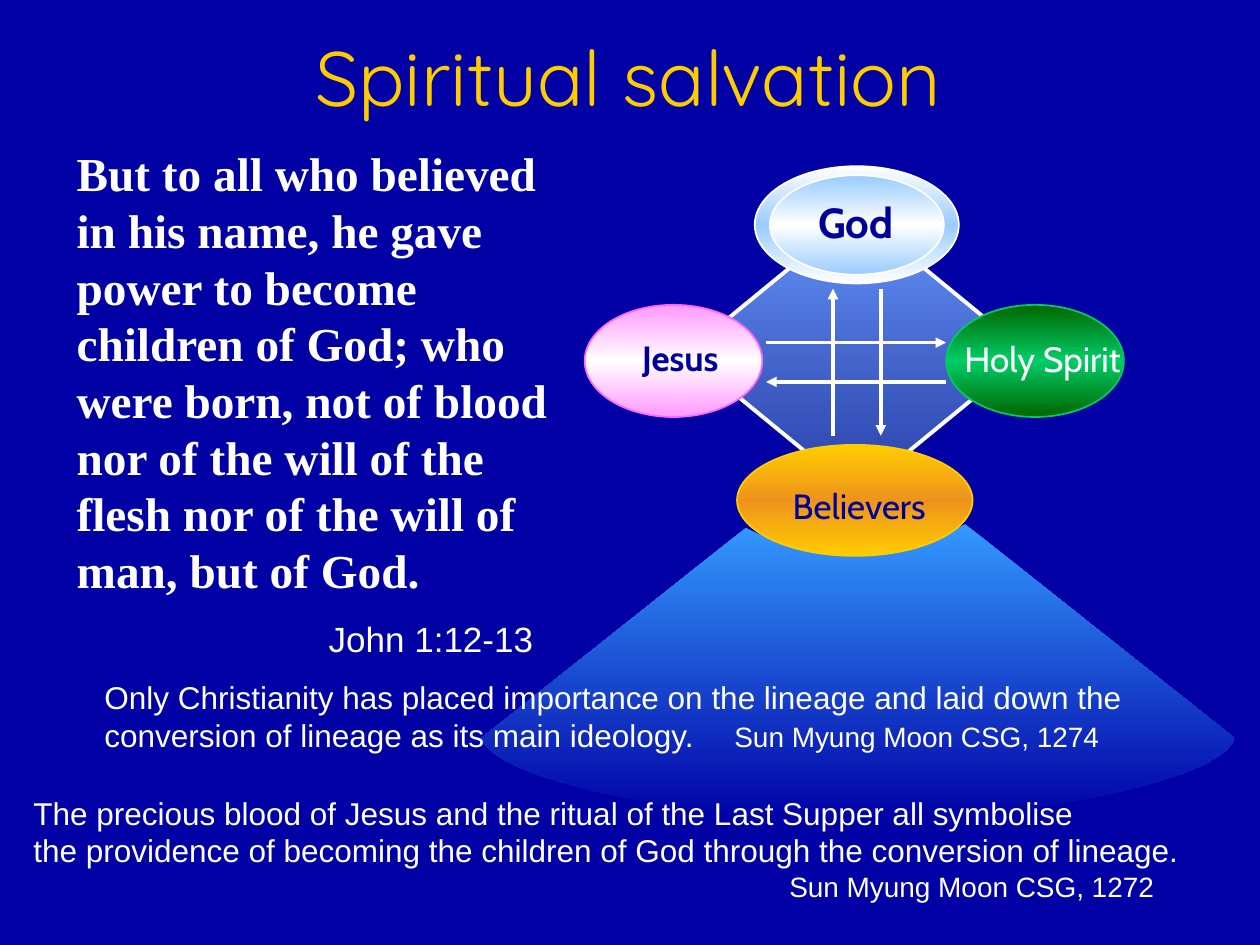
from lxml.etree import SubElement
from pptx import Presentation
from pptx.dml.color import RGBColor
from pptx.enum.shapes import MSO_CONNECTOR, MSO_SHAPE
from pptx.enum.text import MSO_ANCHOR, PP_ALIGN
from pptx.oxml.ns import qn
from pptx.util import Pt

NAVY = RGBColor(0x00, 0x00, 0xA4)
INK = RGBColor(0x00, 0x00, 0x99)
WHITE = RGBColor(0xFF, 0xFF, 0xFF)
GOLD = RGBColor(0xFF, 0xCC, 0x00)
ORANGE = RGBColor(0xEE, 0x94, 0x1C)
SKY = RGBColor(0x33, 0x99, 0xFF)
PALE_BLUE = RGBColor(0x99, 0xCC, 0xFF)
BLUE = RGBColor(0x66, 0x99, 0xFF)
STEEL = RGBColor(0x49, 0x6D, 0xB6)
PINK = RGBColor(0xFF, 0x99, 0xFF)
ROSE = RGBColor(0xFF, 0x66, 0xFF)
GREEN = RGBColor(0x00, 0xCC, 0x66)
DARK_GREEN = RGBColor(0x00, 0x66, 0x00)


def add_text(frame, text, size=18, font="Arial", color=WHITE, bold=False, align=PP_ALIGN.LEFT,
             indent=0, tab=None, before=0, line=None, same_paragraph=False):
    """Add a run, in a new paragraph unless same_paragraph is set."""
    paragraph = frame.paragraphs[-1]
    if not same_paragraph:
        if paragraph.runs:
            paragraph = frame.add_paragraph()
        properties = paragraph._p.get_or_add_pPr()
        properties.set("marL", str(Pt(indent)))
        properties.set("indent", "0")
        paragraph.alignment = align
        paragraph.space_before = Pt(before)
        if line:
            paragraph.line_spacing = Pt(line)
        if tab:
            stops = SubElement(properties, qn("a:tabLst"))
            SubElement(stops, qn("a:tab"), pos=str(Pt(tab)), algn="l")
    run = paragraph.add_run()
    run.text = text
    run.font.size, run.font.name, run.font.bold = Pt(size), font, bold
    run.font.color.rgb = color
    return run


def text_frame(slide, left, top, width, height, anchor=MSO_ANCHOR.TOP):
    frame = slide.shapes.add_textbox(Pt(left), Pt(top), Pt(width), Pt(height)).text_frame
    frame.word_wrap = True
    frame.vertical_anchor = anchor
    return frame


def paint(shape, colors, outline=None, weight=1, end_alpha=None):
    """Fill from top to bottom with evenly spaced colours."""
    shape.shadow.inherit = False
    shape.fill.gradient()
    shape.fill.gradient_angle = 270
    stops = shape._element.spPr.find(".//" + qn("a:gsLst"))
    for stop in list(stops):
        stops.remove(stop)
    for i, color in enumerate(colors):
        stop = SubElement(stops, qn("a:gs"), pos=str(100000 * i // (len(colors) - 1)))
        value = SubElement(stop, qn("a:srgbClr"), val=str(color))
    if end_alpha:
        SubElement(value, qn("a:alpha"), val=str(end_alpha * 1000))
    if outline is None:
        shape.line.fill.background()
    else:
        shape.line.color.rgb = outline
        shape.line.width = Pt(weight)


def add_arrow(slide, x1, y1, x2, y2):
    arrow = slide.shapes.add_connector(MSO_CONNECTOR.STRAIGHT, Pt(x1), Pt(y1), Pt(x2), Pt(y2))
    arrow.line.color.rgb = WHITE
    arrow.line.width = Pt(2)
    SubElement(arrow.line._get_or_add_ln(), qn("a:tailEnd"), type="triangle")
    SubElement(arrow._element.spPr, qn("a:effectLst"))


def curve(p0, p1, p2, p3, steps=24):
    """Points along a cubic Bezier curve, without its start."""
    for i in range(1, steps + 1):
        t = i / steps
        u = 1 - t
        yield tuple(u**3 * a + 3 * u * u * t * b + 3 * u * t * t * c + t**3 * d
                    for a, b, c, d in zip(p0, p1, p2, p3))


def light_cone(slide, left, top):
    start, dip, right = (151.2, 206.7), (216, 221.1), (276.5, 204.5)
    far_right, bottom, far_left = (430.6, 326.9), (216, 374.4), (0, 326.9)
    points = [*curve(start, (180.8, 221.8), (194.4, 221.1), dip),
              *curve(dip, (236.9, 221.1), (250.6, 218.2), right),
              far_right,
              *curve(far_right, (420.5, 355), (287.3, 374.4), bottom),
              *curve(bottom, (144, 374.4), (10.8, 355), far_left)]
    start, *rest = [(Pt(left + x), Pt(top + y)) for x, y in [start, *points]]
    builder = slide.shapes.build_freeform(*start)
    builder.add_line_segments(rest, close=True)
    paint(builder.convert_to_shape(), [SKY, NAVY])


def four_positions(slide, left, top):
    def place(kind, x, y, width, height, *colors, **style):
        shape = slide.shapes.add_shape(kind, Pt(left + x), Pt(top + y), Pt(width), Pt(height))
        paint(shape, colors, **style)

    light_cone(slide, left, top)
    place(MSO_SHAPE.DIAMOND, 116.7, 26.7, 195.8, 160.6, BLUE, STEEL,
          outline=WHITE, weight=2.25, end_alpha=60)
    for x, y, width, height, edge, middle, outline in [
            (146.2, 159.2, 134.6, 63.4, GOLD, ORANGE, GOLD),
            (59.1, 79.2, 101.5, 64.1, PINK, WHITE, ROSE),
            (265.7, 79.2, 101.5, 64.1, DARK_GREEN, GREEN, GREEN),
            (156.3, 0, 116.6, 67, WHITE, PALE_BLUE, WHITE),
            (164.9, 5.1, 99.4, 56.9, PALE_BLUE, WHITE, WHITE)]:
        place(MSO_SHAPE.OVAL, x, y, width, height, edge, middle, edge, outline=outline)

    for x1, y1, x2, y2 in [(201, 154, 201, 70), (228.3, 70, 228.3, 154),
                           (162.8, 100.8, 265.7, 100.8), (265.7, 123.2, 162.8, 123.2)]:
        add_arrow(slide, left + x1, top + y1, left + x2, top + y2)

    width, height = 112, 32
    for name, x, y, size, color, bold in [
            ("Believers", 216, 194, 20, INK, False), ("Jesus", 113.8, 109, 20, INK, True),
            ("God", 214, 31.7, 24, INK, True), ("Holy Spirit", 320.8, 110, 20, WHITE, False)]:
        frame = text_frame(slide, left + x - width / 2, top + y - height / 2, width, height,
                           MSO_ANCHOR.MIDDLE)
        add_text(frame, name, size=size, font="Cabin", color=color, bold=bold,
                 align=PP_ALIGN.CENTER)


def title(slide, left, top, width, height):
    frame = text_frame(slide, left, top, width, height, MSO_ANCHOR.MIDDLE)
    run = add_text(frame, "Spiritual salvation", size=44, font="Quicksand", color=GOLD,
                   align=PP_ALIGN.CENTER)
    properties = run._r.get_or_add_rPr()
    effects = SubElement(properties, qn("a:effectLst"))
    properties.find(qn("a:solidFill")).addnext(effects)
    shadow = SubElement(effects, qn("a:outerShdw"), blurRad=str(Pt(3)), dist=str(Pt(3)),
                        dir="2700000")
    SubElement(shadow, qn("a:srgbClr"), val="000000")


def scripture(slide, left, top, width, height):
    frame = text_frame(slide, left, top, width, height)
    add_text(frame, "But to all who believed in his name, he gave power to become children of God; "
             "who were born, not of blood nor of the will of the flesh nor of the will of man, "
             "but of God.", size=27, font="Times New Roman", bold=True, line=32.4)
    add_text(frame, "John 1:12-13", size=20, indent=144, before=11)


def lineage_quote(slide, left, top, width, height):
    frame = text_frame(slide, left, top, width, height)
    add_text(frame, "Only Christianity has placed importance on the lineage and laid down the "
             "conversion of lineage as its main ideology.", tab=367)
    add_text(frame, "\tSun Myung Moon CSG, 1274", size=16, same_paragraph=True)


def supper_quote(slide, left, top, width, height):
    frame = text_frame(slide, left, top, width, height)
    add_text(frame, "The precious blood of Jesus and the ritual of the Last Supper all symbolise")
    add_text(frame, "the providence of becoming the children of God through the conversion "
             "of lineage.")
    add_text(frame, "Sun Myung Moon CSG, 1272", size=16, indent=432)


def main():
    deck = Presentation()
    deck.slide_width, deck.slide_height = Pt(720), Pt(540)
    slide = deck.slides.add_slide(deck.slide_layouts[6])
    slide.background.fill.solid()
    slide.background.fill.fore_color.rgb = NAVY
    title(slide, 24, -9, 670, 104)
    scripture(slide, 36.7, 79, 289.5, 305)
    four_positions(slide, 275, 95)
    lineage_quote(slide, 52.6, 383.8, 643, 50)
    supper_quote(slide, 12, 450, 690, 72)
    deck.save("out.pptx")


if __name__ == "__main__":
    main()
